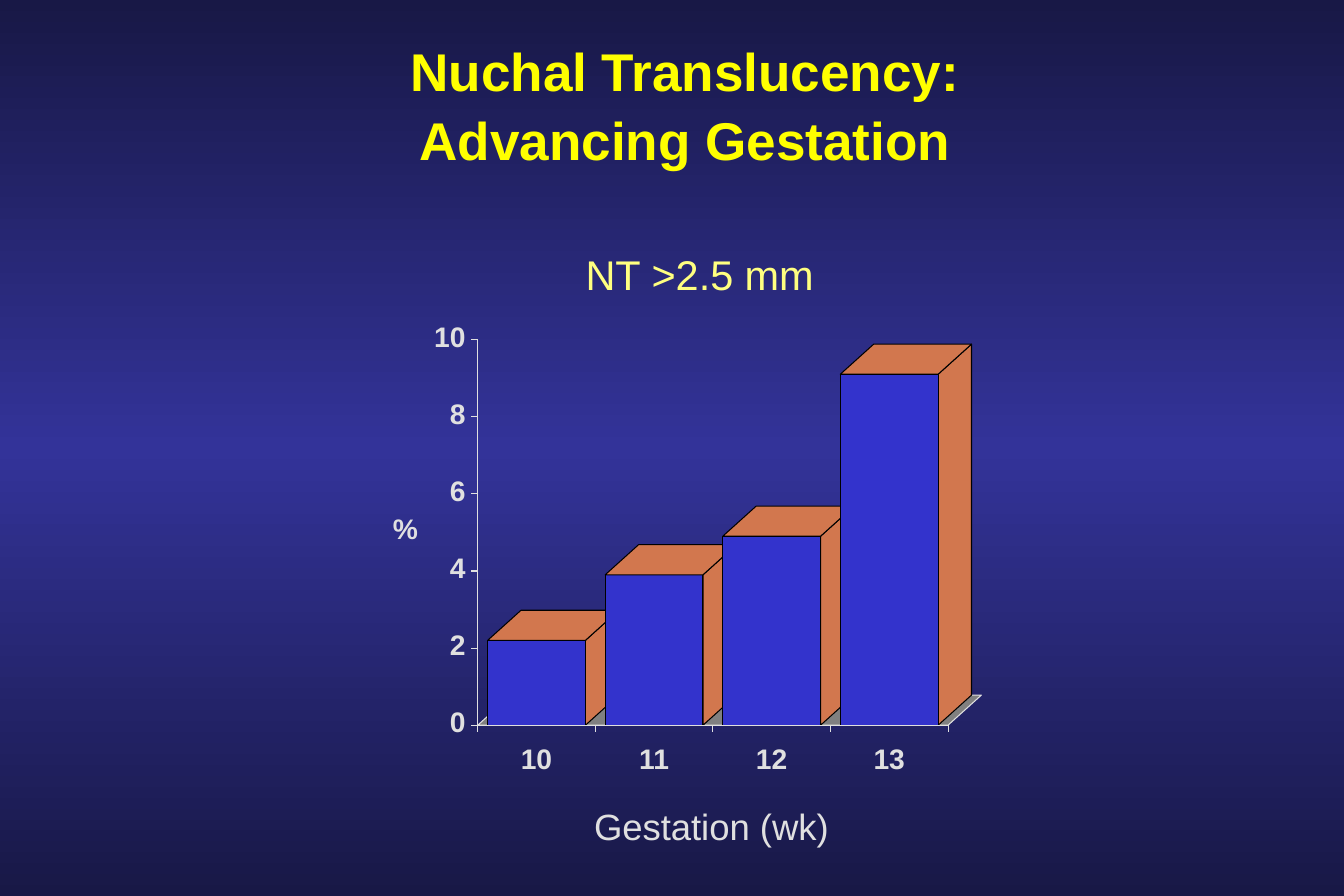
"""Build the nuchal translucency slide with its oblique bar diagram."""
import copy

import pptx
import pptx.dml.color
import pptx.enum.shapes
import pptx.enum.text
import pptx.oxml.ns
import pptx.util
from lxml import etree

Cm = pptx.util.Cm
Pt = pptx.util.Pt
RGBColor = pptx.dml.color.RGBColor
Align = pptx.enum.text.PP_ALIGN
Anchor = pptx.enum.text.MSO_ANCHOR
Shape = pptx.enum.shapes.MSO_SHAPE
qn = pptx.oxml.ns.qn

NIGHT = RGBColor(0x18, 0x18, 0x46)
INDIGO = RGBColor(0x33, 0x33, 0x99)
YELLOW = RGBColor(0xFF, 0xFF, 0x00)
PALE_YELLOW = RGBColor(0xFF, 0xFF, 0x80)
LIGHT = RGBColor(0xE0, 0xE0, 0xE0)
GREY = RGBColor(0x80, 0x80, 0x80)
BLUE = RGBColor(0x33, 0x33, 0xCC)
ORANGE = RGBColor(0xD2, 0x77, 0x4E)
BLACK = RGBColor(0, 0, 0)

TITLE = "Nuchal Translucency:\nAdvancing Gestation"
SHARES = {"10": 2.2, "11": 3.9, "12": 4.9, "13": 9.1}
TICKS = range(0, 11, 2)
CAPTIONS = [
    ("NT >2.5 mm", 14.88, 5.82, 25, PALE_YELLOW, False),
    ("%", 8.62, 11.23, 17, LIGHT, True),
    ("Gestation (wk)", 15.13, 17.56, 22, LIGHT, False),
]

LEFT, BASE = 10.16, 15.42
UNIT = 0.82
SLOT, BAR = 2.5, 2.08
DEPTH_X, DEPTH_Y = 0.71, 0.64
TICK = 0.14
LABEL_WIDTH, LABEL_HEIGHT = 6, 1
EDGE = Pt(0.63)
RIGHT = LEFT + SLOT * len(SHARES)


def apply(target, **formats):
    for name, value in formats.items():
        setattr(target, name, value)


def write(box, text, size, color, bold, **layout):
    frame = box.text_frame
    frame.text = text
    apply(frame, word_wrap=True, vertical_anchor=Anchor.MIDDLE)
    for para in frame.paragraphs:
        apply(para, **layout)
        for span in para.runs:
            apply(span.font, name="Arial", size=Pt(size), bold=bold)
            span.font.color.rgb = color


def add_label(page, text, x, y, size, color, bold, align=Align.CENTER):
    share = 0.5 if align == Align.CENTER else 1
    box = page.shapes.add_textbox(
        Cm(x - LABEL_WIDTH * share), Cm(y - LABEL_HEIGHT / 2), Cm(LABEL_WIDTH), Cm(LABEL_HEIGHT)
    )
    apply(box.text_frame, margin_left=0, margin_right=0, margin_top=0, margin_bottom=0)
    write(box, text, size, color, bold, alignment=align)


def paint(shape, fill, line):
    shape.shadow.inherit = False
    shape.fill.solid()
    shape.fill.fore_color.rgb = fill
    shape.line.color.rgb = line
    shape.line.width = EDGE


def add_face(page, points, fill, line):
    corners = [(Cm(x), Cm(y)) for x, y in points]
    builder = page.shapes.build_freeform(*corners[0])
    builder.add_line_segments(corners[1:], close=True)
    paint(builder.convert_to_shape(), fill, line)


def add_line(page, x1, y1, x2, y2):
    line = page.shapes.add_connector(
        pptx.enum.shapes.MSO_CONNECTOR.STRAIGHT, Cm(x1), Cm(y1), Cm(x2), Cm(y2)
    )
    line.line.color.rgb = LIGHT
    line.line.width = EDGE
    etree.SubElement(line._element.spPr, qn("a:effectLst"))


def add_slab(page, left, right, y, fill, line):
    back = y - DEPTH_Y
    points = [(left, y), (left + DEPTH_X, back), (right + DEPTH_X, back), (right, y)]
    add_face(page, points, fill, line)


def add_bar(page, left, value):
    top, right = BASE - value * UNIT, left + BAR
    side = [
        (right, BASE),
        (right, top),
        (right + DEPTH_X, top - DEPTH_Y),
        (right + DEPTH_X, BASE - DEPTH_Y),
    ]
    add_face(page, side, ORANGE, BLACK)
    front = page.shapes.add_shape(Shape.RECTANGLE, Cm(left), Cm(top), Cm(BAR), Cm(BASE - top))
    paint(front, BLUE, BLACK)
    add_slab(page, left, right, top, ORANGE, BLACK)


def set_background(page):
    fill = page.background.fill
    fill.gradient()
    fill.gradient_angle = 90
    first = page._element.find(".//" + qn("a:gs"))
    first.addnext(copy.deepcopy(first))
    for stop, color, position in zip(fill.gradient_stops, (NIGHT, INDIGO, NIGHT), (0, 0.5, 1)):
        stop.color.rgb = color
        stop.position = position


def add_diagram(page):
    add_slab(page, LEFT, RIGHT, BASE, GREY, LIGHT)
    for index, (week, share) in enumerate(SHARES.items()):
        slot = LEFT + index * SLOT
        add_bar(page, slot + (SLOT - BAR) / 2, share)
        add_label(page, week, slot + SLOT / 2, BASE + 0.71, 17, LIGHT, True)
    add_line(page, LEFT, BASE, LEFT, BASE - TICKS[-1] * UNIT)
    add_line(page, LEFT, BASE, RIGHT, BASE)
    for tick in TICKS:
        y = BASE - tick * UNIT
        add_line(page, LEFT - TICK, y, LEFT, y)
        add_label(page, str(tick), LEFT - 0.26, y - 0.08, 17, LIGHT, True, Align.RIGHT)
    for index in range(len(SHARES) + 1):
        x = LEFT + index * SLOT
        add_line(page, x, BASE, x, BASE + TICK)


def main():
    deck = pptx.Presentation()
    apply(deck, slide_width=Cm(28.58), slide_height=Cm(19.05))
    page = deck.slides.add_slide(deck.slide_layouts[5])
    set_background(page)
    title = page.shapes.title
    apply(title, left=Cm(3.28), top=Cm(1.07), width=Cm(22.58), height=Cm(2.69))
    write(
        title, TITLE, 32, YELLOW, True,
        alignment=Align.CENTER, line_spacing=0.65, space_before=Pt(17),
    )
    add_diagram(page)
    for caption in CAPTIONS:
        add_label(page, *caption)
    deck.save("out.pptx")


if __name__ == "__main__":
    main()
